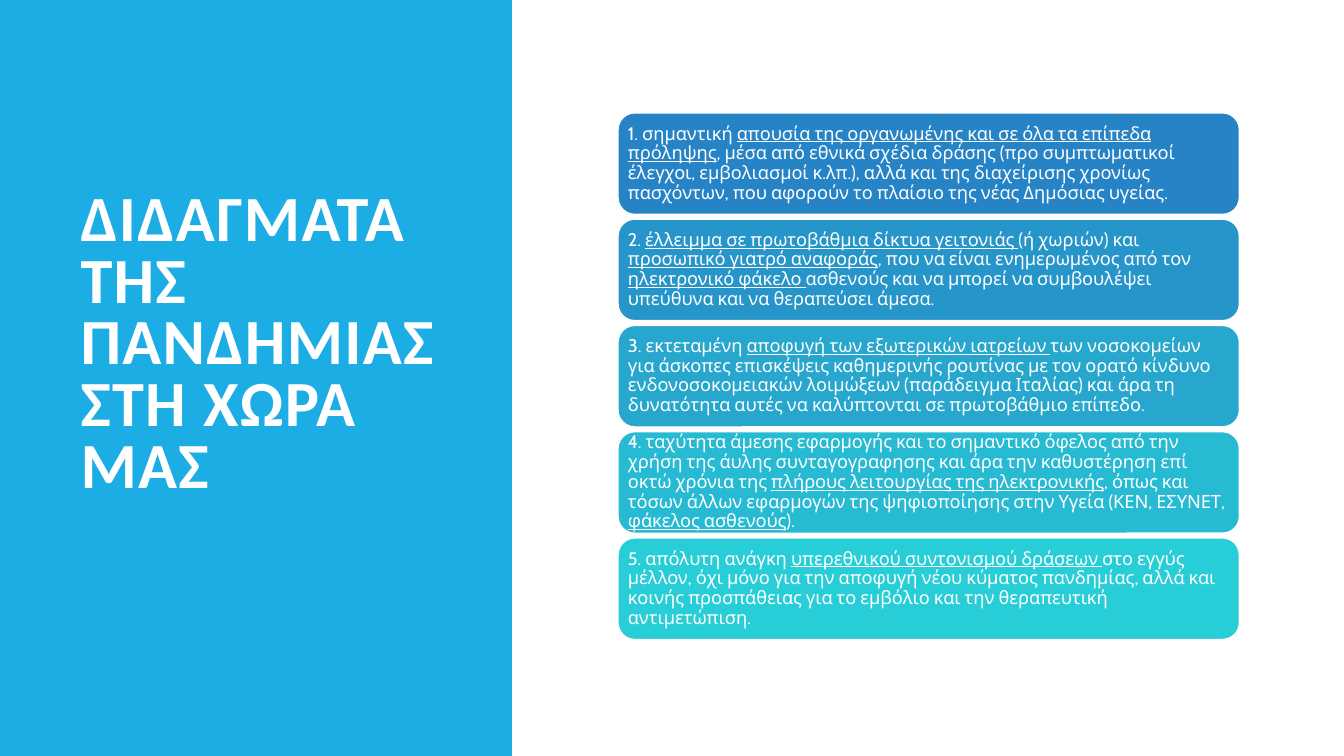
from pptx import Presentation
from pptx import util as u
from pptx.dml.color import RGBColor
from pptx.enum import shapes, text

WHITE = RGBColor(0xFF, 0xFF, 0xFF)
PANEL = RGBColor(0x1C, 0xAD, 0xE4)
CARD_FILLS = [
    RGBColor(0x26, 0x83, 0xC6),
    RGBColor(0x26, 0x95, 0xCA),
    RGBColor(0x27, 0xA7, 0xCE),
    RGBColor(0x27, 0xBA, 0xD3),
    RGBColor(0x27, 0xCE, 0xD7),
]
TITLE = "ΔΙΔΑΓΜΑΤΑ ΤΗΣ ΠΑΝΔΗΜΙΑΣ ΣΤΗ ΧΩΡΑ ΜΑΣ"
LESSONS = [
    "1. σημαντική |απουσία της οργανωμένης και σε όλα τα επίπεδα πρόληψης|, "
    "μέσα από εθνικά σχέδια δράσης (προ συμπτωματικοί έλεγχοι, εμβολιασμοί κ.λπ.), "
    "αλλά και της διαχείρισης χρονίως πασχόντων, που αφορούν το πλαίσιο της νέας "
    "Δημόσιας υγείας.",
    "2. |έλλειμμα σε πρωτοβάθμια δίκτυα γειτονιάς |(ή χωριών) και "
    "|προσωπικό γιατρό αναφοράς|, που να είναι ενημερωμένος από τον "
    "|ηλεκτρονικό φάκελο |ασθενούς και να μπορεί να συμβουλέψει υπεύθυνα "
    "και να θεραπεύσει άμεσα.",
    "3. εκτεταμένη |αποφυγή των εξωτερικών ιατρείων |των νοσοκομείων για άσκοπες "
    "επισκέψεις καθημερινής ρουτίνας με τον ορατό κίνδυνο ενδονοσοκομειακών "
    "λοιμώξεων (παράδειγμα Ιταλίας) και άρα τη δυνατότητα αυτές να καλύπτονται "
    "σε πρωτοβάθμιο επίπεδο.",
    "4. ταχύτητα άμεσης εφαρμογής και το σημαντικό όφελος από την χρήση της άυλης "
    "συνταγογραφησης και άρα την καθυστέρηση επί οκτώ χρόνια της "
    "|πλήρους λειτουργίας της ηλεκτρονικής|, όπως και τόσων άλλων εφαρμογών της "
    "ψηφιοποίησης στην Υγεία (ΚΕΝ, ΕΣΥΝΕΤ, |φάκελος ασθενούς|).",
    "5. απόλυτη ανάγκη |υπερεθνικού συντονισμού δράσεων |στο εγγύς μέλλον, όχι μόνο "
    "για την αποφυγή νέου κύματος πανδημίας, αλλά και κοινής προσπάθειας για το "
    "εμβόλιο και την θεραπευτική αντιμετώπιση.",
]


def write(sp, content, font, size, bold=False, line=0.9, inset=0.13, tracking=None):
    tf = sp.text_frame
    tf.word_wrap = True
    tf.vertical_anchor = text.MSO_ANCHOR.MIDDLE
    tf.margin_left = tf.margin_right = u.Cm(inset)
    tf.margin_top = tf.margin_bottom = u.Cm(0.13)
    p = tf.paragraphs[0]
    p.alignment = text.PP_ALIGN.LEFT
    p.line_spacing = line
    for i, part in enumerate(content.split("|")):
        r = p.add_run()
        r.text = part
        r.font.name = font
        r.font.size = u.Pt(size)
        r.font.bold = bold
        r.font.underline = i % 2 == 1
        r.font.color.rgb = WHITE
        if tracking:
            r._r.get_or_add_rPr().set("spc", str(tracking))


def block(s, kind, x, y, w, h, fill):
    sp = s.shapes.add_shape(kind, u.Cm(x), u.Cm(y), u.Cm(w), u.Cm(h))
    sp.shadow.inherit = False
    sp.fill.solid()
    sp.fill.fore_color.rgb = fill
    sp.line.fill.background()
    return sp


def title_panel(s, x, y, w, h):
    block(s, shapes.MSO_SHAPE.RECTANGLE, x, y, w, h, PANEL)
    sp = s.shapes.add_textbox(u.Cm(x + 1.78), u.Cm(y + 1.78), u.Cm(w - 3.4), u.Cm(h - 5.15))
    write(sp, TITLE, "Calibri", 46, bold=True, line=0.8, inset=0.25, tracking=100)


def lesson_cards(s, x, y, w, h, gap=0.11):
    card_h = (h - gap * (len(LESSONS) - 1)) / len(LESSONS)
    for i, (lesson, fill) in enumerate(zip(LESSONS, CARD_FILLS)):
        top = y + i * (card_h + gap)
        sp = block(s, shapes.MSO_SHAPE.ROUNDED_RECTANGLE, x, top, w, card_h, fill)
        sp.line.color.rgb = WHITE
        sp.line.width = u.Pt(1.25)
        write(sp, lesson, "Cabin", 13)


def main():
    prs = Presentation()
    prs.slide_width = u.Cm(33.87)
    prs.slide_height = u.Cm(19.05)
    s = prs.slides.add_slide(prs.slide_layouts[6])
    title_panel(s, 0, 0, 12.9, 19.05)
    lesson_cards(s, 15.57, 2.84, 15.67, 13.28)
    prs.save("out.pptx")


if __name__ == "__main__":
    main()
